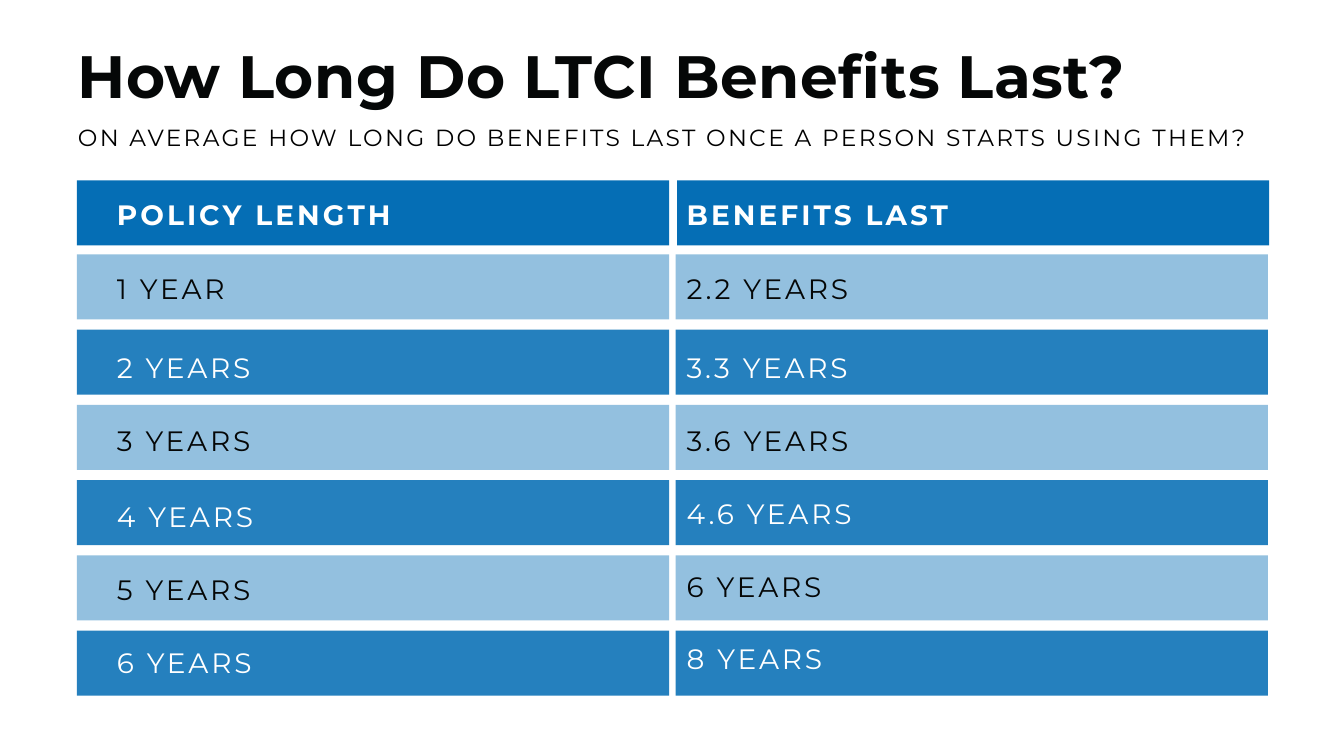
from pptx import Presentation
from pptx.dml.color import RGBColor
from pptx.enum.shapes import MSO_SHAPE
from pptx.enum.text import MSO_ANCHOR, MSO_AUTO_SIZE, PP_ALIGN
from pptx.oxml.ns import qn
from pptx.oxml.xmlchemy import OxmlElement
from pptx.util import Pt

RECT = MSO_SHAPE.RECTANGLE
TOP = MSO_ANCHOR.TOP
NO_FIT = MSO_AUTO_SIZE.NONE
LEFT = PP_ALIGN.LEFT

TITLE = "How Long Do LTCI Benefits Last?"
SUBTITLE = "ON AVERAGE HOW LONG DO BENEFITS LAST ONCE A PERSON STARTS USING THEM?"
HEADERS = ("POLICY LENGTH", "BENEFITS LAST")
# policy length, benefits last, and the top of each label
ROWS = [
    (("1 YEAR", "2.2 YEARS"), (288, 288)),
    (("2 YEARS", "3.3 YEARS"), (372.2, 372.2)),
    (("3 YEARS", "3.6 YEARS"), (450.7, 450.7)),
    (("4 YEARS", "4.6 YEARS"), (532, 529)),
    (("5 YEARS", "6 YEARS"), (610.5, 607)),
    (("6 YEARS", "8 YEARS"), (688.3, 684.7)),
]

THEME = {
    "font": "Montserrat",
    "blue": "056EB5",
    "ink": "050707",
    "black": "000000",
    "white": "FFFFFF",
    "light_alpha": 43,
    "dark_alpha": 87,
}
# size, line spacing, letter spacing, bold
STYLES = {
    "title": {"size": 64, "line": 83.2, "tracking": 0.6, "bold": True},
    "subtitle": {"size": 25, "line": 32.5, "tracking": 2.5, "bold": False},
    "header": {"size": 30, "line": 39, "tracking": 3.3, "bold": True},
    "cell": {"size": 30, "line": 39, "tracking": 3, "bold": False},
}

BAR_W, BAR_H = 634.5, 69.8
BAR_X = (82.5, 724)
HEADER_X = (82.5, 725.4)
HEADER_Y, HEADER_TEXT_Y = 193.3, 208.5
FIRST_ROW_Y, ROW_STEP = 272.5, 80.64
LABEL_X = (125.3, 735.8)
LABEL_W, LABEL_H = 393.8, 37.8


def write(sp, text, style, color):
    st = STYLES[style]
    tf = sp.text_frame
    frame = {"word_wrap": True, "auto_size": NO_FIT, "vertical_anchor": TOP,
             "margin_left": 0, "margin_right": 0,
             "margin_top": 0, "margin_bottom": 0}
    for name, value in frame.items():
        setattr(tf, name, value)
    p = tf.paragraphs[0]
    p.alignment = LEFT
    p.line_spacing = Pt(st["line"])
    r = p.add_run()
    r.text = text
    font = {"name": THEME["font"], "size": Pt(st["size"]), "bold": st["bold"]}
    for name, value in font.items():
        setattr(r.font, name, value)
    r.font.color.rgb = RGBColor.from_string(THEME[color])
    r._r.get_or_add_rPr().set("spc", str(round(st["tracking"] * 100)))


def add_label(slide, x, y, w, h, text, style, color):
    sp = slide.shapes.add_textbox(Pt(x), Pt(y), Pt(w), Pt(h))
    write(sp, text, style, color)


def add_bar(slide, x, y, alpha=100):
    """Add a blue bar; alpha is its opacity in percent."""
    sp = slide.shapes.add_shape(RECT, Pt(x), Pt(y), Pt(BAR_W), Pt(BAR_H))
    sp.shadow.inherit = False
    sp.fill.solid()
    sp.fill.fore_color.rgb = RGBColor.from_string(THEME["blue"])
    sp.line.fill.background()
    if alpha < 100:
        node = OxmlElement("a:alpha")
        node.set("val", str(alpha * 1000))
        sp._element.spPr.find(".//" + qn("a:srgbClr")).append(node)


def main():
    prs = Presentation()
    prs.slide_width, prs.slide_height = Pt(1440), Pt(810)
    slide = prs.slides.add_slide(prs.slide_layouts[5])

    title = slide.shapes.title
    title.left, title.top = Pt(82.8), Pt(35.3)
    title.width, title.height = Pt(1243.4), Pt(81.4)
    write(title, TITLE, "title", "ink")
    add_label(slide, 83.5, 129.6, 1304.6, 31, SUBTITLE, "subtitle", "black")

    for bar_x, label_x, text in zip(HEADER_X, LABEL_X, HEADERS):
        add_bar(slide, bar_x, HEADER_Y)
        add_label(slide, label_x, HEADER_TEXT_Y, LABEL_W, LABEL_H,
                  text, "header", "white")

    for i, (texts, tops) in enumerate(ROWS):
        dark = i % 2 == 1
        alpha = THEME["dark_alpha" if dark else "light_alpha"]
        color = "white" if dark else "ink"
        for bar_x, label_x, text, top in zip(BAR_X, LABEL_X, texts, tops):
            add_bar(slide, bar_x, FIRST_ROW_Y + i * ROW_STEP, alpha)
            add_label(slide, label_x, top, LABEL_W, LABEL_H,
                      text, "cell", color)

    prs.save("out.pptx")


if __name__ == "__main__":
    main()
